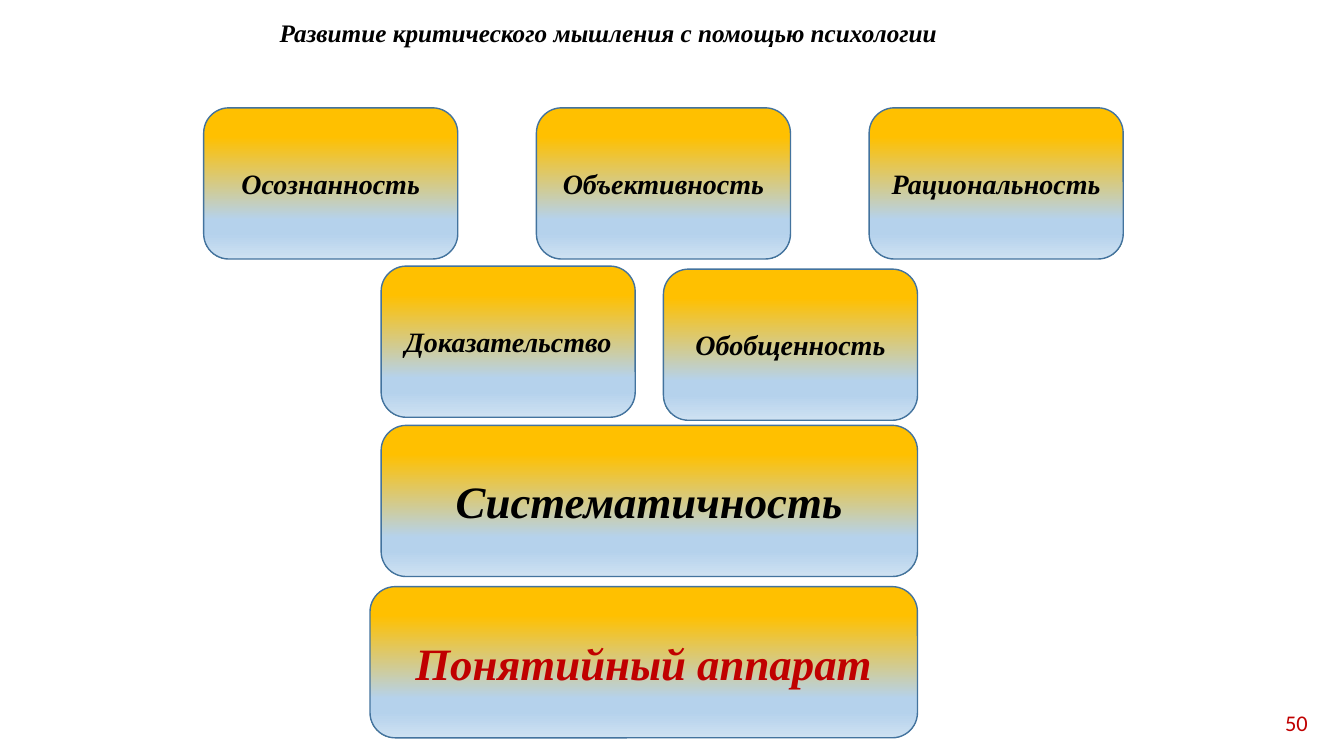
from lxml import etree
from pptx import Presentation
from pptx.dml.color import RGBColor
from pptx.enum.shapes import MSO_SHAPE
from pptx.enum.text import MSO_ANCHOR, MSO_AUTO_SIZE, PP_ALIGN
from pptx.oxml.ns import qn
from pptx.util import Inches, Pt

ROUNDED = MSO_SHAPE.ROUNDED_RECTANGLE
MIDDLE, TOP = MSO_ANCHOR.MIDDLE, MSO_ANCHOR.TOP
CENTER, RIGHT = PP_ALIGN.CENTER, PP_ALIGN.RIGHT
NO_FIT = MSO_AUTO_SIZE.NONE
TITLE_ONLY = 5

BLACK = RGBColor(0x00, 0x00, 0x00)
RED = RGBColor(0xC0, 0x00, 0x00)
OUTLINE = RGBColor(0x43, 0x73, 0x9E)
GOLD = RGBColor(0xFF, 0xC0, 0x00)
SKY = RGBColor(0xB5, 0xD2, 0xEC)
PALE = RGBColor(0xCE, 0xE1, 0xF2)
GRADIENT = [(19, GOLD), (74, SKY), (83, SKY), (100, PALE)]

TITLE = "Развитие критического мышления с помощью психологии"
PAGE = "50"
TOP_ROW = ["Осознанность", "Объективность", "Рациональность"]
PAIR = ["Доказательство", "Обобщенность"]
BASE = ["Систематичность", "Понятийный аппарат"]

# Grid in inches
BOX_W, BOX_H = 2.52, 1.5
TOP_LEFT, TOP_Y, TOP_STEP = 2.02, 1.07, 3.3
PAIR_LEFT, PAIR_Y, PAIR_STEP, PAIR_DROP = 3.78, 2.64, 2.8, 0.03
BASE_RIGHT = PAIR_LEFT + PAIR_STEP + BOX_W
BASE_LEFTS, BASE_Y, BASE_STEP = [PAIR_LEFT, 3.67], 4.22, 1.6

STRONG = {"name": "Times New Roman", "bold": True, "italic": True}
SMALL = {**STRONG, "size": Pt(20)}
LARGE = {**STRONG, "size": Pt(32)}


def write(sp, text, font, color, align=CENTER, anchor=MIDDLE):
    tf = sp.text_frame
    for name, value in {"word_wrap": True, "auto_size": NO_FIT,
                        "vertical_anchor": anchor}.items():
        setattr(tf, name, value)
    p = tf.paragraphs[0]
    p.alignment = align
    r = p.add_run()
    r.text = text
    for name, value in font.items():
        setattr(r.font, name, value)
    r.font.color.rgb = color


def fill_gradient(sp):
    """Fill the shape from top to bottom with the stops of GRADIENT."""
    sp.fill.gradient()
    grad = sp._element.spPr.find(qn("a:gradFill"))
    for child in list(grad):
        grad.remove(child)
    stops = etree.SubElement(grad, qn("a:gsLst"))
    for share, color in GRADIENT:
        stop = etree.SubElement(stops, qn("a:gs"), pos=str(share * 1000))
        etree.SubElement(stop, qn("a:srgbClr"), val=str(color))
    etree.SubElement(grad, qn("a:lin"), ang="5400000", scaled="0")


def add_box(slide, text, left, top, width=BOX_W, font=SMALL, color=BLACK):
    sp = slide.shapes.add_shape(ROUNDED, *map(Inches, (left, top, width, BOX_H)))
    sp.shadow.inherit = False
    fill_gradient(sp)
    sp.line.color.rgb = OUTLINE
    sp.line.width = Pt(1)
    write(sp, text, font, color)


def main():
    prs = Presentation()
    prs.slide_width, prs.slide_height = Inches(13.33), Inches(7.5)
    slide = prs.slides.add_slide(prs.slide_layouts[TITLE_ONLY])

    title = slide.shapes.title
    title.left, title.top, title.width, title.height = map(
        Inches, (1.86, 0.12, 8.35, 0.4))
    write(title, TITLE, {**STRONG, "size": Pt(18)}, BLACK, anchor=TOP)

    for i, text in enumerate(TOP_ROW):
        add_box(slide, text, TOP_LEFT + i * TOP_STEP, TOP_Y)
    for i, text in enumerate(PAIR):
        add_box(slide, text, PAIR_LEFT + i * PAIR_STEP, PAIR_Y + i * PAIR_DROP)
    for i, (text, left, color) in enumerate(zip(BASE, BASE_LEFTS, (BLACK, RED))):
        add_box(slide, text, left, BASE_Y + i * BASE_STEP,
                BASE_RIGHT - left, LARGE, color)

    number = slide.shapes.add_textbox(*map(Inches, (12.23, 6.98, 0.84, 0.37)))
    write(number, PAGE, {"name": "Calibri", "size": Pt(16)}, RED, align=RIGHT)

    prs.save("out.pptx")


if __name__ == "__main__":
    main()
